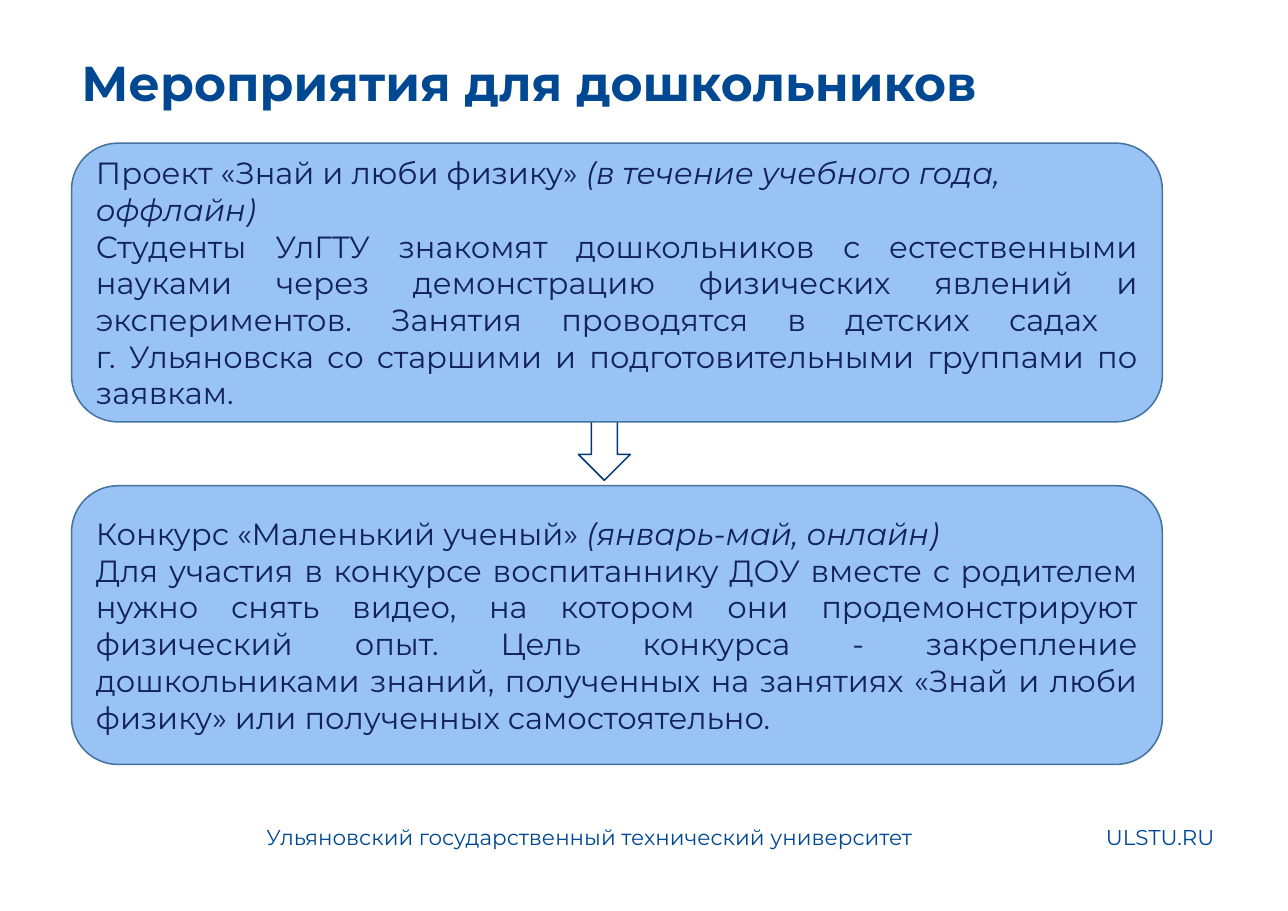
from pptx import Presentation
from pptx.dml.color import RGBColor
from pptx.enum.shapes import MSO_SHAPE
from pptx.enum.text import MSO_ANCHOR, PP_ALIGN
from pptx.util import Inches, Pt

ROUND_RECT = MSO_SHAPE.ROUNDED_RECTANGLE
ARROW = MSO_SHAPE.RIGHT_ARROW
MIDDLE = MSO_ANCHOR.MIDDLE
LEFT, JUSTIFY = PP_ALIGN.LEFT, PP_ALIGN.JUSTIFY

FONT = "Montserrat"
BLUE = RGBColor(0x00, 0x48, 0x92)
NAVY = RGBColor(0x12, 0x22, 0x5A)
CARD_FILL = RGBColor(0x9A, 0xC3, 0xF5)
CARD_LINE = RGBColor(0x43, 0x73, 0x9E)
ARROW_LINE = RGBColor(0x00, 0x37, 0x72)

LABELS = [
    ("Мероприятия для дошкольников", (0.64, 0.43, 10.85, 2.51), 32, True),
    ("Ульяновский государственный технический университет",
     (2.32, 7.43, 6.2, 0.39), 14, False),
    ("ULSTU.RU", (9.94, 7.43, 1.4, 0.39), 14, False),
]
EVENTS = [
    ("Проект «Знай и люби физику» ",
     "(в течение учебного года, оффлайн)",
     "Студенты УлГТУ знакомят дошкольников с естественными науками через "
     "демонстрацию физических явлений и экспериментов. Занятия проводятся "
     "в детских садах \nг. Ульяновска со старшими и подготовительными "
     "группами по заявкам."),
    ("Конкурс «Маленький ученый» ",
     "(январь-май, онлайн)",
     "Для участия в конкурсе воспитаннику ДОУ вместе с родителем нужно снять "
     "видео, на котором они продемонстрируют физический опыт. Цель конкурса "
     "- закрепление дошкольниками знаний, полученных на занятиях «Знай и "
     "люби физику» или полученных самостоятельно."),
]
CARD_X, CARD_Y, CARD_W, CARD_H, CARD_STEP = 0.65, 1.3, 9.9, 2.53, 3.11


def box(x, y, w, h):
    return Inches(x), Inches(y), Inches(w), Inches(h)


def set_font(p, size, color, bold=False):
    p.font.name = FONT
    p.font.size = Pt(size)
    p.font.color.rgb = color
    p.font.bold = bold


def add_outlined(s, kind, bounds, color):
    sp = s.shapes.add_shape(kind, *box(*bounds))
    sp.shadow.inherit = False
    sp.line.color.rgb = color
    sp.line.width = Pt(1)
    return sp


def add_label(s, text, bounds, size, bold):
    tf = s.shapes.add_textbox(*box(*bounds)).text_frame
    tf.word_wrap = True
    p = tf.paragraphs[0]
    p.text = text
    set_font(p, size, BLUE, bold)


def add_card(s, y, name, when, about):
    sp = add_outlined(s, ROUND_RECT, (CARD_X, y, CARD_W, CARD_H), CARD_LINE)
    sp.fill.solid()
    sp.fill.fore_color.rgb = CARD_FILL
    tf = sp.text_frame
    tf.word_wrap = True
    tf.vertical_anchor = MIDDLE
    heading, body = tf.paragraphs[0], tf.add_paragraph()
    heading.add_run().text = name
    r = heading.add_run()
    r.text = when
    r.font.italic = True
    body.text = about
    for p, align in ((heading, LEFT), (body, JUSTIFY)):
        p.alignment = align
        set_font(p, 20, NAVY)


def main():
    prs = Presentation()
    prs.slide_width, prs.slide_height = Inches(11.69), Inches(8.27)
    s = prs.slides.add_slide(prs.slide_layouts[6])
    arrow = add_outlined(s, ARROW, (5.01, 3.65, 0.95, 0.47), ARROW_LINE)
    arrow.fill.background()
    arrow.rotation = 90
    for label in LABELS:
        add_label(s, *label)
    for i, event in enumerate(EVENTS):
        add_card(s, CARD_Y + i * CARD_STEP, *event)
    prs.save("out.pptx")


if __name__ == "__main__":
    main()
